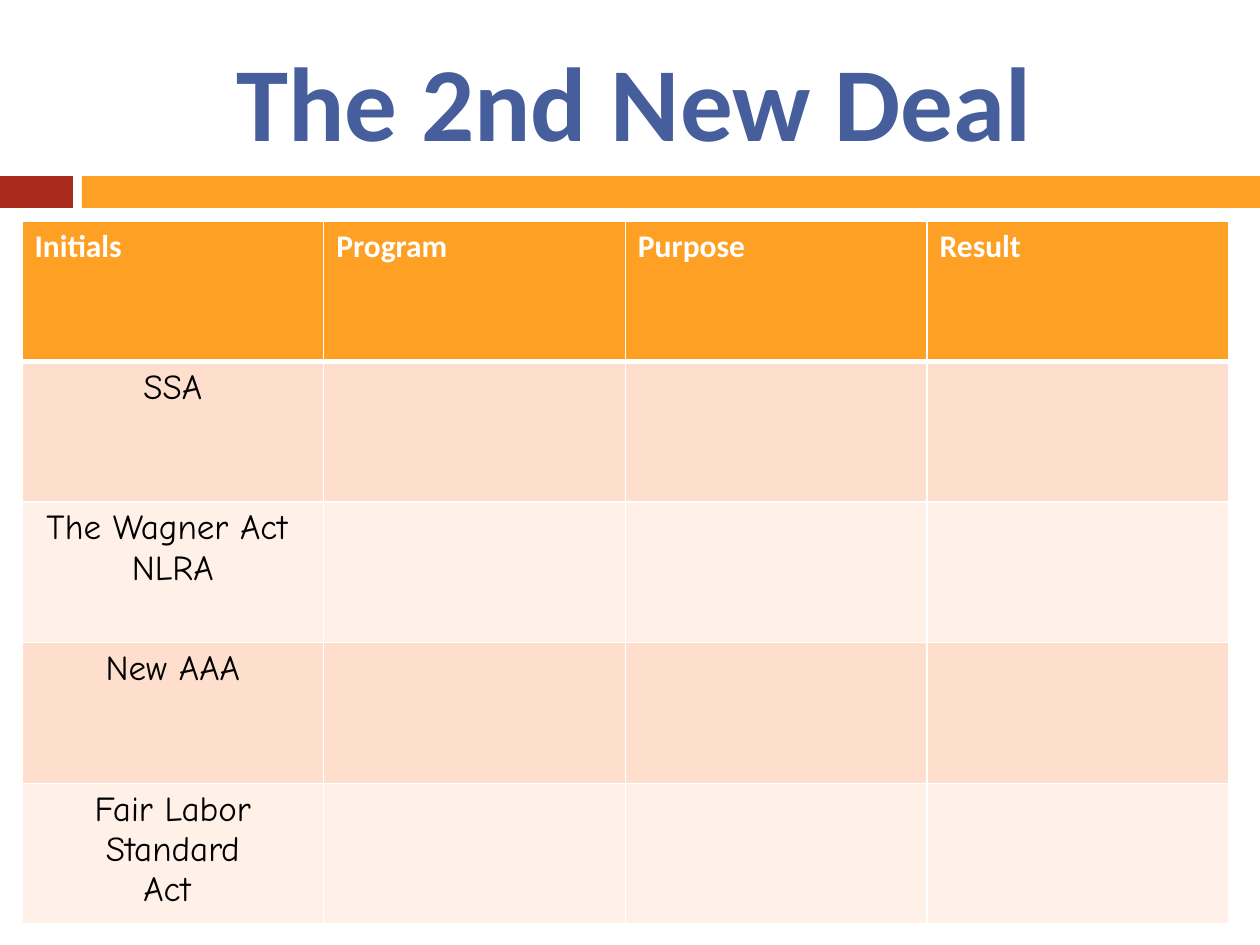
from lxml.etree import SubElement
from pptx import Presentation
from pptx.dml.color import RGBColor
from pptx.enum.shapes import MSO_SHAPE
from pptx.enum.text import MSO_ANCHOR, PP_ALIGN
from pptx.oxml.ns import qn
from pptx.util import Emu, Pt

PX_PER_INCH = 126
ORANGE, RED, BLUE = "FDA023", "AA2B1E", "465E9C"
WHITE, BLACK = "FFFFFF", "000000"
BANDS = ["FEDFCD", "FFF0E8"]
HEADINGS = ["Initials", "Program", "Purpose", "Result"]
ACTS = [
    ["SSA"],
    ["The Wagner Act ", "NLRA"],
    ["New AAA"],
    ["Fair Labor Standard", "Act "],
]


def px(length):
    return Emu(round(length * 914400 / PX_PER_INCH))


def color(value):
    return RGBColor.from_string(value)


def add_bar(page, left, top, width, height, fill):
    bar = page.shapes.add_shape(
        MSO_SHAPE.RECTANGLE, px(left), px(top), px(width), px(height))
    bar.shadow.inherit = False
    bar.fill.solid()
    bar.fill.fore_color.rgb = color(fill)
    bar.line.fill.background()


def write(frame, lines, size, font, fill, bold=False, align=PP_ALIGN.LEFT):
    """Put each line in a paragraph of its own."""
    for index, line in enumerate(lines):
        para = frame.add_paragraph() if index else frame.paragraphs[0]
        para.alignment = align
        span = para.add_run()
        span.text = line
        span.font.size = Pt(size)
        span.font.name = font
        span.font.bold = bold
        span.font.color.rgb = color(fill)


def add_title(page, text):
    box = page.shapes.add_textbox(px(84), px(32), px(1124), px(136))
    frame = box.text_frame
    frame.word_wrap = True
    frame.vertical_anchor = MSO_ANCHOR.MIDDLE
    write(frame, [text], 60, "Calibri", BLUE, True, PP_ALIGN.CENTER)


def style_cell(cell, fill, top, bottom):
    """Set white borders, with the given top and bottom widths, and the fill."""
    properties = cell._tc.get_or_add_tcPr()
    for side, width in (("L", 1), ("R", 1), ("T", top), ("B", bottom)):
        line = SubElement(properties, qn(f"a:ln{side}"), w=str(Pt(width)))
        paint = SubElement(line, qn("a:solidFill"))
        SubElement(paint, qn("a:srgbClr"), val=WHITE)
    cell.fill.solid()
    cell.fill.fore_color.rgb = color(fill)


def add_program_table(page):
    row_count, column_count = len(ACTS) + 1, len(HEADINGS)
    table = page.shapes.add_table(
        row_count, column_count, px(22), px(221), px(1207), px(703)).table
    for row in range(row_count):
        fill = BANDS[(row - 1) % 2] if row else ORANGE
        for column in range(column_count):
            style_cell(table.cell(row, column), fill,
                       top=3 if row == 1 else 1, bottom=1 if row else 3)
    for column, heading in enumerate(HEADINGS):
        write(table.cell(0, column).text_frame, [heading],
              18, "Calibri", WHITE, bold=True)
    for row, lines in enumerate(ACTS, start=1):
        write(table.cell(row, 0).text_frame, lines,
              20, "Comic Neue", BLACK, align=PP_ALIGN.CENTER)


def main():
    deck = Presentation()
    deck.slide_width, deck.slide_height = px(1260), px(945)
    page = deck.slides.add_slide(deck.slide_layouts[6])
    add_bar(page, 0, 176, 73, 32, RED)
    add_bar(page, 82, 176, 1178, 32, ORANGE)
    add_title(page, "The 2nd New Deal ")
    add_program_table(page)
    deck.save("out.pptx")


if __name__ == "__main__":
    main()
